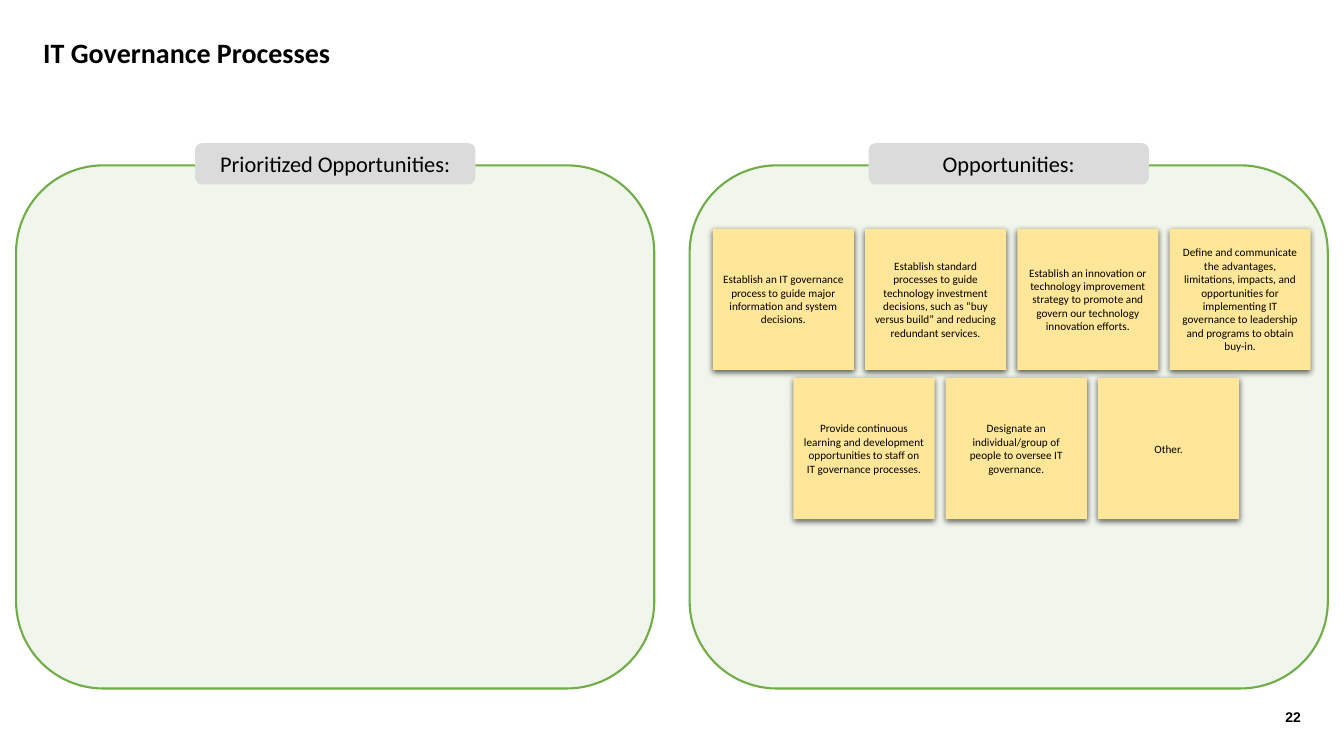
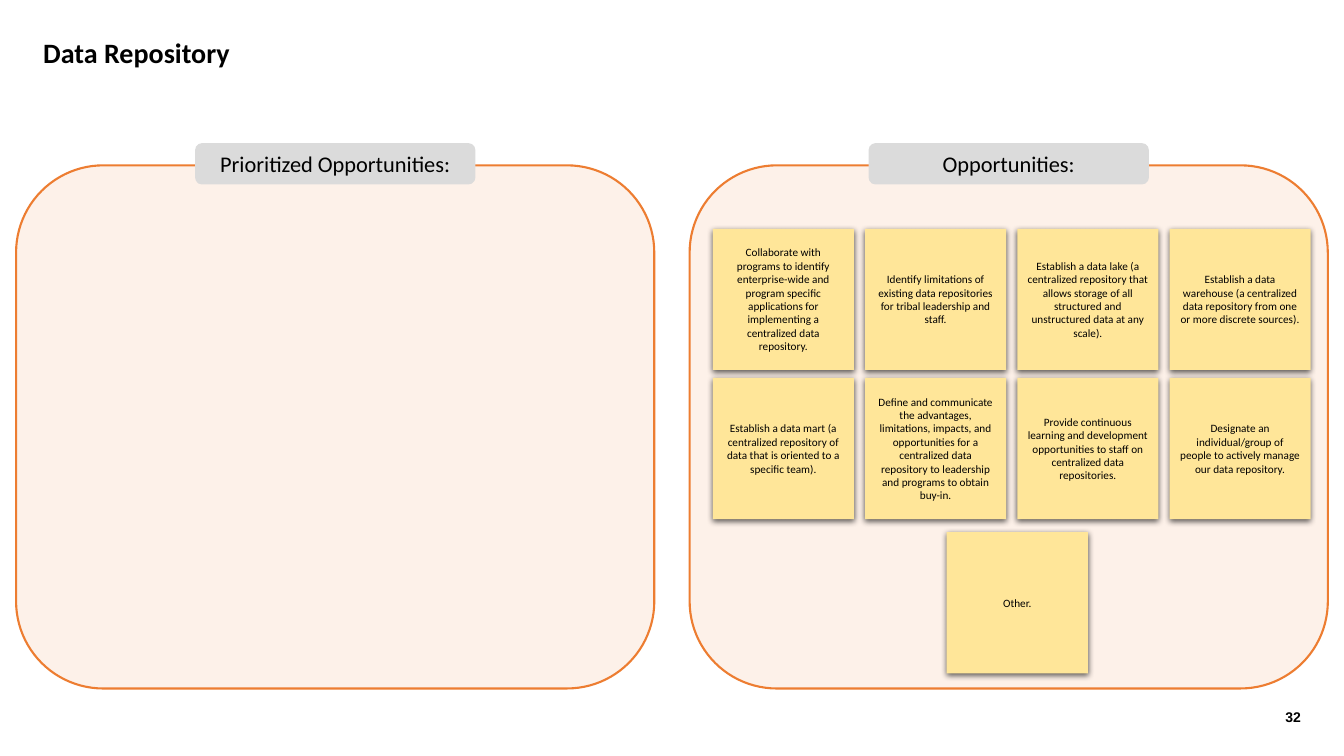
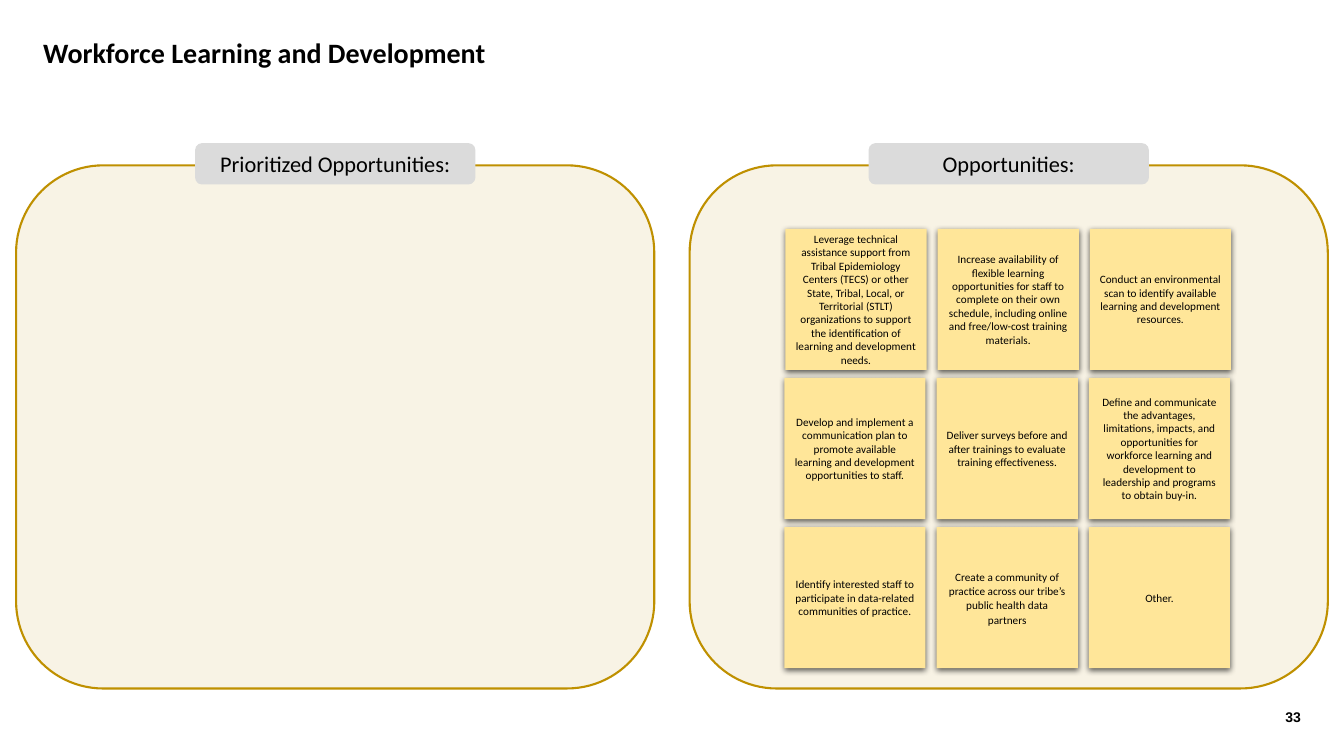
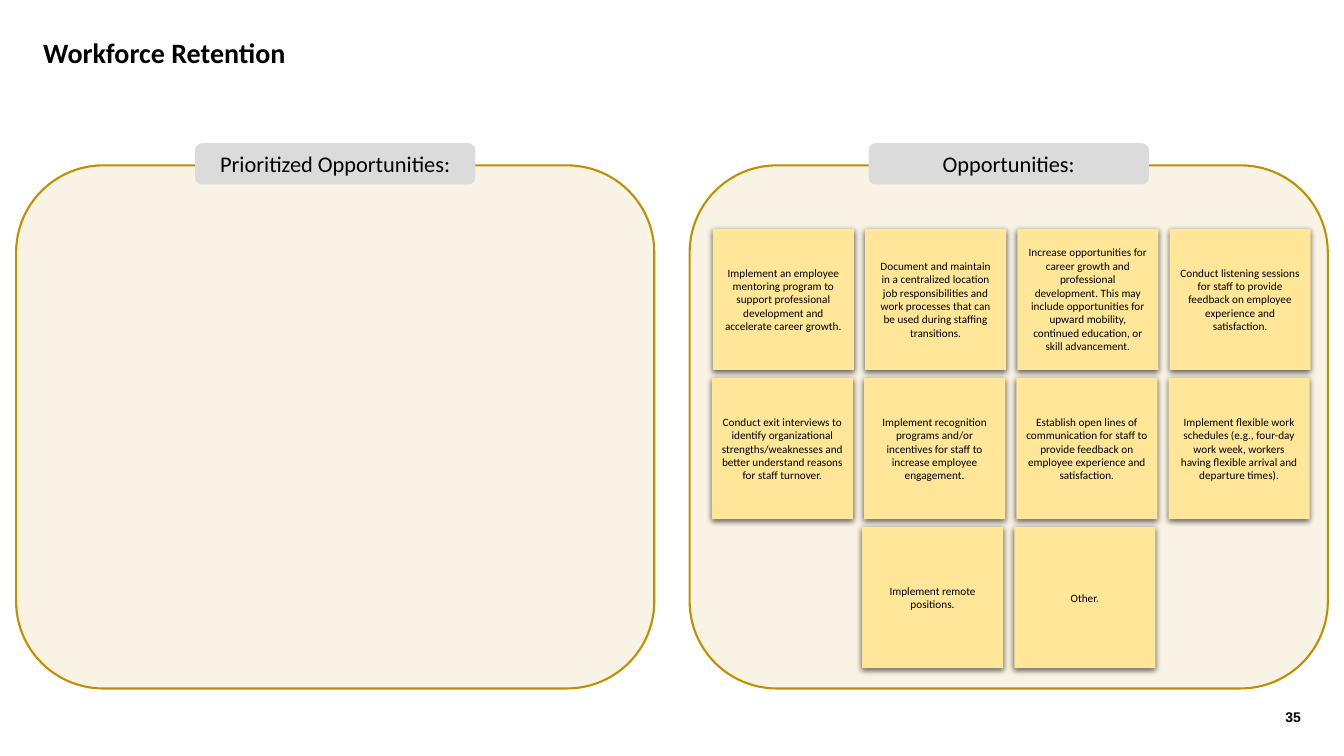
from pptx import Presentation
from pptx.dml.color import RGBColor
from pptx.enum.shapes import MSO_SHAPE
from pptx.enum.text import MSO_ANCHOR, MSO_AUTO_SIZE, PP_ALIGN
from pptx.oxml import parse_xml
from pptx.oxml.ns import nsdecls, qn
from pptx.util import Inches, Pt

RECT, ROUND_RECT = MSO_SHAPE.RECTANGLE, MSO_SHAPE.ROUNDED_RECTANGLE
LEFT, CENTER, RIGHT = PP_ALIGN.LEFT, PP_ALIGN.CENTER, PP_ALIGN.RIGHT
TOP, MIDDLE = MSO_ANCHOR.TOP, MSO_ANCHOR.MIDDLE
GROW = MSO_AUTO_SIZE.SHAPE_TO_FIT_TEXT

BLACK = RGBColor(0x00, 0x00, 0x00)
GREEN = RGBColor(0x70, 0xAD, 0x47)
ORANGE = RGBColor(0xED, 0x7D, 0x31)
GOLD = RGBColor(0xBF, 0x90, 0x00)
LABEL_GREY = RGBColor(0xDB, 0xDB, 0xDB)
NOTE_YELLOW = RGBColor(0xFF, 0xE6, 0x99)

TITLE_FONT = {"name": "Calibri", "size": Pt(20), "bold": True}
LABEL_FONT = {"name": "Calibri", "size": Pt(16)}
NOTE_FONT = {"name": "Calibri", "size": Pt(8)}
NUMBER_FONT = {"name": "Arial", "size": Pt(10), "bold": True}
LOOSE = {"line_spacing": 1.07, "space_after": Pt(8)}

# Boxes are left, top, width, height in inches
TITLE_BOX = (0.33, 0.3, 12.78, 0.44)
NUMBER_BOX = (10, 6.91, 3, 0.4)
LEFT_PANEL = (0.16, 1.64, 6.33, 5.19)
RIGHT_PANEL = (6.84, 1.64, 6.33, 5.19)
LABEL_W, LABEL_H, LABEL_RISE = 2.78, 0.41, 0.22
NOTE_SIZE, NOTE_PITCH = 1.4, 1.51
ROW_TOPS = (0.63, 2.11, 3.59)

# Each row: left edge within the panel, then its notes
SLIDES = [
    {"title": "IT Governance Processes", "number": 22, "color": GREEN, "rows": [
        (0.23, [
            "Establish an IT governance process to guide major information and system decisions.",
            "Establish standard processes to guide technology investment decisions, such as “buy versus build” and reducing redundant services.",
            "Establish an innovation or technology improvement strategy to promote and govern our technology innovation efforts.",
            "Define and communicate the advantages, limitations, impacts, and opportunities for implementing IT governance to leadership and programs to obtain buy-in.",
        ]),
        (1.03, [
            "Provide continuous learning and development opportunities to staff on IT governance processes.",
            "Designate an individual/group of people to oversee IT governance.",
            "Other.",
        ]),
    ]},
    {"title": "Data Repository", "number": 32, "color": ORANGE, "tops": (0.63, 2.11, 3.64), "rows": [
        (0.23, [
            "Collaborate with programs to identify enterprise-wide and program specific applications for implementing a centralized data repository.",
            "Identify limitations of existing data repositories for tribal leadership and staff.",
            "Establish a data lake (a centralized repository that allows storage of all structured and unstructured data at any scale).",
            "Establish a data warehouse (a centralized data repository from one or more discrete sources).",
        ]),
        (0.23, [
            "Establish a data mart (a centralized repository of data that is oriented to a specific team).",
            "Define and communicate the advantages, limitations, impacts, and opportunities for a centralized data repository to leadership and programs to obtain buy-in.",
            "Provide continuous learning and development opportunities to staff on centralized data repositories.",
            "Designate an individual/group of people to actively manage our data repository.",
        ]),
        (2.55, ["Other."]),
    ]},
    {"title": "Workforce Learning and Development", "number": 33, "color": GOLD, "rows": [
        (0.95, [
            "Leverage technical assistance support from Tribal Epidemiology Centers (TECS) or other State, Tribal, Local, or Territorial (STLT) organizations to support the identification of learning and development needs.",
            "Increase availability of flexible learning opportunities for staff to complete on their own schedule, including online and free/low-cost training materials.",
            "Conduct an environmental scan to identify available learning and development resources.",
        ]),
        (0.94, [
            "Develop and implement a communication plan to promote available learning and development opportunities to staff.",
            "Deliver surveys before and after trainings to evaluate training effectiveness.",
            "Define and communicate the advantages, limitations, impacts, and opportunities for workforce learning and development to leadership and programs to obtain buy-in.",
        ]),
        (0.94, [
            "Identify interested staff to participate in data-related communities of practice.",
            ("Create a community of practice across our tribe’s public health data partners", LOOSE),
            "Other.",
        ]),
    ]},
    {"title": "Workforce Retention", "number": 35, "color": GOLD, "rows": [
        (0.23, [
            "Implement an employee mentoring program to support professional development and accelerate career growth.",
            "Document and maintain in a centralized location job responsibilities and work processes that can be used during staffing transitions.",
            "Increase opportunities for career growth and professional development. This may include opportunities for upward mobility, continued education, or skill advancement.",
            "Conduct listening sessions for staff to provide feedback on employee experience and satisfaction.",
        ]),
        (0.22, [
            "Conduct exit interviews to identify organizational strengths/weaknesses and better understand reasons for staff turnover.",
            "Implement recognition programs and/or incentives for staff to increase employee engagement.",
            "Establish open lines of communication for staff to provide feedback on employee experience and satisfaction.",
            "Implement flexible work schedules (e.g., four-day work week, workers having flexible arrival and departure times).",
        ]),
        (1.71, ["Implement remote positions.", "Other."]),
    ]},
]


def inches(box):
    return [Inches(v) for v in box]


def set_text(sp, text, font, align, anchor, grow=False, spacing=None):
    tf = sp.text_frame
    tf.word_wrap = True
    tf.vertical_anchor = anchor
    if grow:
        tf.auto_size = GROW
    p = tf.paragraphs[0]
    p.alignment = align
    for key, value in (spacing or {}).items():
        setattr(p, key, value)
    r = p.add_run()
    r.text = text
    for key, value in font.items():
        setattr(r.font, key, value)
    r.font.color.rgb = BLACK


def add_text(s, box, *args, **kwargs):
    set_text(s.shapes.add_textbox(*inches(box)), *args, **kwargs)


def add_filled(s, kind, box, color):
    sp = s.shapes.add_shape(kind, *inches(box))
    sp.shadow.inherit = False
    sp.fill.solid()
    sp.fill.fore_color.rgb = color
    sp.line.fill.background()
    return sp


def add_panel(s, box, label, color):
    """Tinted panel with its label centred on the top edge."""
    x, y, w, _ = box
    sp = add_filled(s, ROUND_RECT, box, color)
    tint = sp._element.spPr.find(qn("a:solidFill")).find(qn("a:srgbClr"))
    tint.append(parse_xml(f'<a:alpha {nsdecls("a")} val="10000"/>'))
    sp.line.color.rgb = color
    sp.line.width = Pt(1.5)
    label_box = (x + (w - LABEL_W) / 2, y - LABEL_RISE, LABEL_W, LABEL_H)
    sp = add_filled(s, ROUND_RECT, label_box, LABEL_GREY)
    set_text(sp, label, LABEL_FONT, CENTER, TOP, grow=True)


def add_note(s, x, y, note):
    text, spacing = note if isinstance(note, tuple) else (note, None)
    sp = add_filled(s, RECT, (x, y, NOTE_SIZE, NOTE_SIZE), NOTE_YELLOW)
    sp._element.spPr.find(qn("a:effectLst")).append(parse_xml(
        f'<a:outerShdw {nsdecls("a")} blurRad="{Pt(4.5)}" dist="{Pt(1.5)}" '
        'dir="5400000" algn="t" rotWithShape="0">'
        '<a:srgbClr val="000000"><a:alpha val="63000"/></a:srgbClr></a:outerShdw>'))
    set_text(sp, text, NOTE_FONT, CENTER, MIDDLE, spacing=spacing)


def add_note_rows(s, panel, rows, tops):
    x, y = panel[:2]
    for top, (left, notes) in zip(tops, rows):
        for i, note in enumerate(notes):
            add_note(s, x + left + i * NOTE_PITCH, y + top, note)


def add_opportunity_slide(prs, title, number, color, rows, tops=ROW_TOPS):
    s = prs.slides.add_slide(prs.slide_layouts[6])
    add_text(s, TITLE_BOX, title, TITLE_FONT, LEFT, TOP, grow=True)
    add_panel(s, LEFT_PANEL, "Prioritized Opportunities:", color)
    add_panel(s, RIGHT_PANEL, "Opportunities:", color)
    add_note_rows(s, RIGHT_PANEL, rows, tops)
    add_text(s, NUMBER_BOX, str(number), NUMBER_FONT, RIGHT, MIDDLE)


def main():
    prs = Presentation()
    prs.slide_width, prs.slide_height = Inches(13.33), Inches(7.5)
    for content in SLIDES:
        add_opportunity_slide(prs, **content)
    prs.save("out.pptx")


if __name__ == "__main__":
    main()
